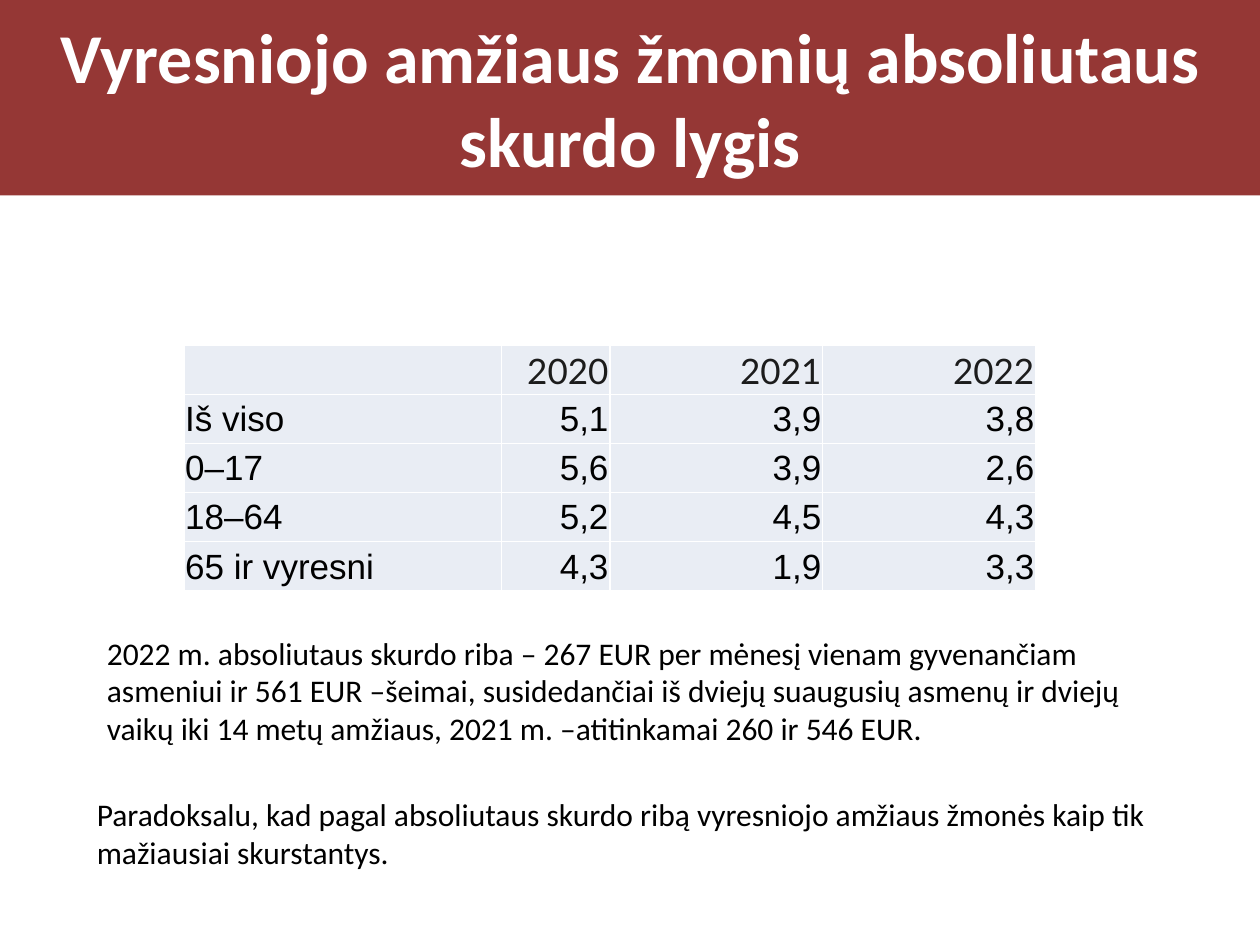
from dataclasses import dataclass

from pptx import Presentation
from pptx import util as u
from pptx.dml.color import RGBColor
from pptx.enum import text

TITLE = "Vyresniojo amžiaus žmonių absoliutaus skurdo lygis"
COLUMN_WIDTHS = (2.52, 0.86, 1.69, 1.69)
ROW_HEIGHT = 0.39
ROWS = (
    ("", "2020", "2021", "2022"),
    ("Iš viso", "5,1", "3,9", "3,8"),
    ("0–17", "5,6", "3,9", "2,6"),
    ("18–64", "5,2", "4,5", "4,3"),
    ("65 ir vyresni", "4,3", "1,9", "3,3"),
)


@dataclass(frozen=True)
class Note:
    left: float
    top: float
    width: float
    height: float
    wording: str


NOTES = (
    Note(0.67, 6.26, 8.98, 0.71,
         "Paradoksalu, kad pagal absoliutaus skurdo ribą vyresniojo amžiaus "
         "žmonės kaip tik mažiausiai skurstantys."),
    Note(0.75, 4.98, 8.43, 1.31,
         "2022 m. absoliutaus skurdo riba – 267 EUR per mėnesį vienam "
         "gyvenančiam asmeniui ir 561 EUR –šeimai, susidedančiai iš dviejų "
         "suaugusių asmenų ir dviejų vaikų iki 14 metų amžiaus, 2021 m. "
         "–atitinkamai 260 ir 546 EUR."),
)


def color(value: str) -> RGBColor:
    return RGBColor.from_string(value)


def style(para, name: str, size: int, shade: str, bold: bool = False) -> None:
    font = para.font
    font.name, font.size, font.bold = name, u.Pt(size), bold
    font.color.rgb = color(shade)


def place(shape, left: float, top: float, width: float, height: float) -> None:
    shape.left, shape.top = u.Inches(left), u.Inches(top)
    shape.width, shape.height = u.Inches(width), u.Inches(height)


def draw_title(page) -> None:
    title = page.shapes.title
    place(title, 0, 0, 10, 1.55)
    title.fill.solid()
    title.fill.fore_color.rgb = color("953735")
    frame = title.text_frame
    frame.text = TITLE
    frame.auto_size = text.MSO_AUTO_SIZE.NONE
    frame.vertical_anchor = text.MSO_ANCHOR.MIDDLE
    para = frame.paragraphs[0]
    para.alignment = text.PP_ALIGN.CENTER
    style(para, "Calibri", 40, "FFFFFF", bold=True)


def draw_note(page, note: Note) -> None:
    box = page.shapes.add_textbox(0, 0, 0, 0)
    place(box, note.left, note.top, note.width, note.height)
    frame = box.text_frame
    frame.word_wrap = True
    frame.auto_size = text.MSO_AUTO_SIZE.SHAPE_TO_FIT_TEXT
    frame.text = note.wording
    style(frame.paragraphs[0], "Calibri", 18, "000000")


def draw_cell(cell, wording: str, header: bool, label: bool) -> None:
    cell.fill.solid()
    cell.fill.fore_color.rgb = color("E9EDF4")
    cell.margin_left = cell.margin_right = cell.margin_top = u.Inches(0.01)
    cell.margin_bottom = 0
    cell.vertical_anchor = text.MSO_ANCHOR.MIDDLE
    cell.text = wording
    para = cell.text_frame.paragraphs[0]
    para.alignment = text.PP_ALIGN.LEFT if label else text.PP_ALIGN.RIGHT
    if header:
        style(para, "Lato", 20, "1C1C1C")
    else:
        style(para, "Arial", 20, "000000")


def draw_table(page) -> None:
    table = page.shapes.add_table(
        len(ROWS), len(COLUMN_WIDTHS), u.Inches(1.46), u.Inches(2.74),
        u.Inches(sum(COLUMN_WIDTHS)), u.Inches(ROW_HEIGHT * len(ROWS))).table
    table.first_row = table.horz_banding = False
    for column, width in zip(table.columns, COLUMN_WIDTHS):
        column.width = u.Inches(width)
    for r, values in enumerate(ROWS):
        table.rows[r].height = u.Inches(ROW_HEIGHT)
        for c, wording in enumerate(values):
            draw_cell(table.cell(r, c), wording, header=r == 0, label=c == 0)


def main() -> None:
    deck = Presentation()
    deck.slide_width, deck.slide_height = u.Inches(10), u.Inches(7.5)
    page = deck.slides.add_slide(deck.slide_layouts.get_by_name("Title Only"))
    draw_title(page)
    for note in NOTES:
        draw_note(page, note)
    draw_table(page)
    deck.save("out.pptx")


if __name__ == "__main__":
    main()
